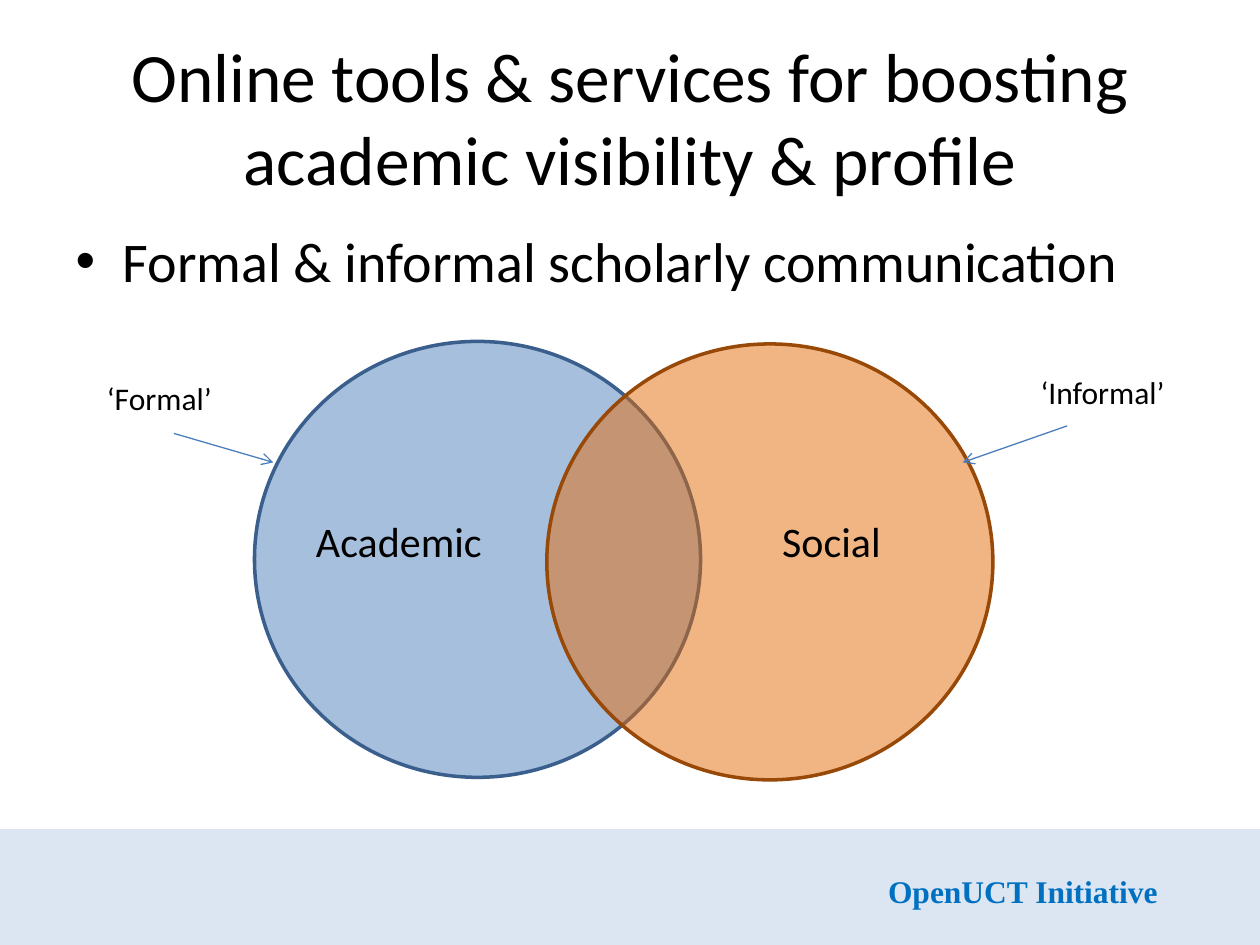
from dataclasses import dataclass

from lxml import etree
from pptx import Presentation
from pptx.dml.color import RGBColor
from pptx.enum.shapes import MSO_CONNECTOR, MSO_SHAPE
from pptx.enum.text import MSO_ANCHOR, MSO_AUTO_SIZE, PP_ALIGN
from pptx.oxml.ns import qn
from pptx.util import Inches, Pt

STRAIGHT = MSO_CONNECTOR.STRAIGHT
OVAL, RECTANGLE = MSO_SHAPE.OVAL, MSO_SHAPE.RECTANGLE
MIDDLE, TOP = MSO_ANCHOR.MIDDLE, MSO_ANCHOR.TOP
LEFT, CENTER = PP_ALIGN.LEFT, PP_ALIGN.CENTER
GROW = MSO_AUTO_SIZE.SHAPE_TO_FIT_TEXT
BLACK = "000000"


@dataclass
class Circle:
    left: float
    top: float
    fill: str
    line: str


@dataclass
class Label:
    text: str
    left: float
    top: float
    width: float
    height: float = 0.4
    size: float = 18
    font: str = "Calibri"
    color: str = BLACK
    bold: bool = False
    wrap: bool = True


@dataclass
class Arrow:
    start: tuple[float, float]
    end: tuple[float, float]


CIRCLES = [
    Circle(2.02, 2.71, "4F81BD", "3A5F8C"),
    Circle(4.34, 2.73, "E46C0A", "984807"),
]
LABELS = [
    Label("Academic", 2.41, 4.04, 1.53, 0.5, 24),
    Label("Social", 6.11, 4.04, 1.53, 0.5, 24),
    Label("‘Formal’", 0.75, 2.96, 1.42),
    Label("‘Informal’", 8.16, 2.91, 1.42),
    Label("OpenUCT Initiative", 6.95, 6.87, 2.36, font="Times New Roman",
          color="0070C0", bold=True, wrap=False),
]
ARROWS = [
    Arrow((1.38, 3.44), (2.17, 3.67)),
    Arrow((8.47, 3.38), (7.64, 3.67)),
]


def rgb(value: str) -> RGBColor:
    return RGBColor.from_string(value)


def add_span(para, text: str, size: float, font: str = "Calibri",
             color: str = BLACK, bold: bool = False) -> None:
    span = para.add_run()
    span.text = text
    span.font.size = Pt(size)
    span.font.name = font
    span.font.bold = bold
    span.font.color.rgb = rgb(color)


def fill_placeholder(box, top: float, height: float, text: str, size: float,
                     anchor, align) -> None:
    box.left, box.top = Inches(0.5), Inches(top)
    box.width, box.height = Inches(9), Inches(height)
    box.text_frame.vertical_anchor = anchor
    para = box.text_frame.paragraphs[0]
    para.alignment = align
    para.space_before = Pt(0)
    add_span(para, text, size)


def add_circle(page, circle: Circle) -> None:
    shape = page.shapes.add_shape(OVAL, Inches(circle.left), Inches(circle.top),
                                  Inches(3.54), Inches(3.46))
    shape.shadow.inherit = False
    shape.fill.solid()
    shape.fill.fore_color.rgb = rgb(circle.fill)
    color = shape.fill._xPr.find(qn("a:solidFill"))[0]
    etree.SubElement(color, qn("a:alpha"), val="50000")
    shape.line.color.rgb = rgb(circle.line)
    shape.line.width = Pt(2)


def add_band(page) -> None:
    band = page.shapes.add_shape(RECTANGLE, 0, Inches(6.58), Inches(10), Inches(0.92))
    band.shadow.inherit = False
    band.fill.solid()
    band.fill.fore_color.rgb = rgb("DCE6F2")
    band.line.fill.background()


def add_label(page, label: Label) -> None:
    box = page.shapes.add_textbox(Inches(label.left), Inches(label.top),
                                  Inches(label.width), Inches(label.height))
    box.text_frame.word_wrap = label.wrap
    box.text_frame.auto_size = GROW
    add_span(box.text_frame.paragraphs[0], label.text, label.size,
             label.font, label.color, label.bold)


def add_arrow(page, arrow: Arrow) -> None:
    ends = [Inches(value) for value in (*arrow.start, *arrow.end)]
    connector = page.shapes.add_connector(STRAIGHT, *ends)
    connector.line.color.rgb = rgb("4B7EBC")
    connector.line.width = Pt(0.75)
    etree.SubElement(connector.line._get_or_add_ln(), qn("a:tailEnd"), type="arrow")
    etree.SubElement(connector._element.spPr, qn("a:effectLst"))


def main() -> None:
    deck = Presentation()
    deck.slide_width, deck.slide_height = Inches(10), Inches(7.5)
    page = deck.slides.add_slide(deck.slide_layouts[1])

    # Title and bullet
    fill_placeholder(page.shapes.title, 0.3, 1.25,
                     "Online tools & services for boosting academic visibility & profile",
                     39.6, MIDDLE, CENTER)
    fill_placeholder(page.placeholders[1], 1.75, 4.95,
                     "Formal & informal scholarly communication", 32, TOP, LEFT)

    # Overlapping circles and footer band
    for circle in CIRCLES:
        add_circle(page, circle)
    add_band(page)

    # Labels and the arrows pointing at the circles
    for label in LABELS:
        add_label(page, label)
    for arrow in ARROWS:
        add_arrow(page, arrow)

    deck.save("out.pptx")


if __name__ == "__main__":
    main()
